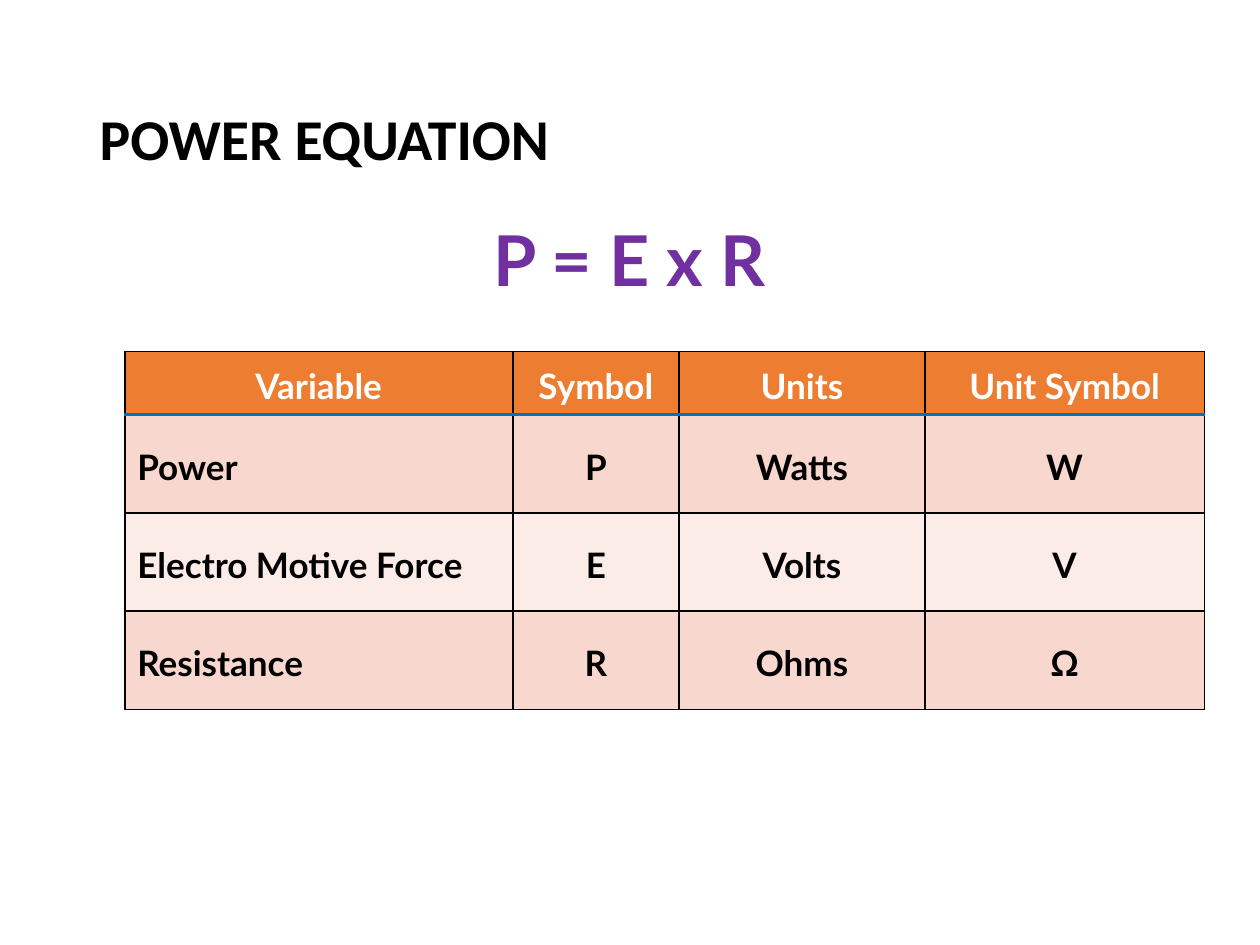
from lxml import etree
from pptx import Presentation
from pptx import util as u
from pptx.dml.color import RGBColor
from pptx.enum import text
from pptx.oxml import ns

BLACK = RGBColor(0x00, 0x00, 0x00)
WHITE = RGBColor(0xFF, 0xFF, 0xFF)
PURPLE = RGBColor(0x70, 0x30, 0xA0)
ORANGE = RGBColor(0xED, 0x7D, 0x31)
BLUE = RGBColor(0x00, 0x70, 0xC0)
BANDS = (RGBColor(0xF8, 0xD7, 0xCE), RGBColor(0xFC, 0xEC, 0xE8))

SLIDE_WIDTH, SLIDE_HEIGHT = u.Inches(10), u.Inches(7.5)
COLUMN_WIDTHS = (3.08, 1.32, 1.95, 2.22)
ROW_HEIGHTS = (0.5, 0.78, 0.78, 0.78)
ROWS = (
    ("Variable", "Symbol", "Units", "Unit Symbol"),
    ("Power", "P", "Watts", "W"),
    ("Electro Motive Force", "E", "Volts", "V"),
    ("Resistance", "R", "Ohms", "Ω"),
)


def inches(*lengths):
    return tuple(u.Inches(length) for length in lengths)


def format_paragraph(paragraph, font_name, size, color, alignment, spacing=1.0):
    paragraph.alignment = alignment
    paragraph.line_spacing = spacing
    font = paragraph.font
    font.name, font.size, font.bold = font_name, u.Pt(size), True
    font.color.rgb = color


def place_title(slide, box):
    title = slide.shapes.title
    title.left, title.top, title.width, title.height = box
    frame = title.text_frame
    frame.text = "POWER EQUATION"
    frame.vertical_anchor = text.MSO_ANCHOR.MIDDLE
    format_paragraph(frame.paragraphs[0], "Calibri", 33, BLACK, text.PP_ALIGN.LEFT, 0.9)


def place_equation(slide, box):
    frame = slide.shapes.add_textbox(*box).text_frame
    frame.word_wrap = True
    frame.auto_size = text.MSO_AUTO_SIZE.SHAPE_TO_FIT_TEXT
    frame.text = "P = E x R"
    format_paragraph(frame.paragraphs[0], "Lato", 40, PURPLE, text.PP_ALIGN.CENTER)


def set_borders(cell, top, bottom):
    properties = cell._tc.get_or_add_tcPr()
    sides = (("L", (BLACK, 1)), ("R", (BLACK, 1)), ("T", top), ("B", bottom))
    for position, (side, (color, width)) in enumerate(sides):
        line = etree.Element(ns.qn(f"a:ln{side}"), w=str(u.Pt(width)))
        fill = etree.SubElement(line, ns.qn("a:solidFill"))
        etree.SubElement(fill, ns.qn("a:srgbClr"), val=str(color))
        properties.insert(position, line)


def place_table(slide, box):
    table = slide.shapes.add_table(len(ROWS), len(COLUMN_WIDTHS), *box).table
    for column, width in zip(table.columns, COLUMN_WIDTHS):
        column.width = u.Inches(width)
    for row, height in zip(table.rows, ROW_HEIGHTS):
        row.height = u.Inches(height)

    plain, divider = (BLACK, 1), (BLUE, 1.5)
    for row_index, labels in enumerate(ROWS):
        header = row_index == 0
        for column_index, label in enumerate(labels):
            cell = table.cell(row_index, column_index)
            cell.text = label
            cell.vertical_anchor = text.MSO_ANCHOR.MIDDLE
            cell.fill.solid()
            cell.fill.fore_color.rgb = ORANGE if header else BANDS[(row_index - 1) % 2]
            centered = header or column_index > 0
            format_paragraph(
                cell.text_frame.paragraphs[0], "Lato", 20, WHITE if header else BLACK,
                text.PP_ALIGN.CENTER if centered else text.PP_ALIGN.LEFT, 1.15,
            )
            set_borders(
                cell,
                top=divider if row_index == 1 else plain,
                bottom=divider if header else plain,
            )


def main():
    presentation = Presentation()
    presentation.slide_width, presentation.slide_height = SLIDE_WIDTH, SLIDE_HEIGHT
    slide = presentation.slides.add_slide(presentation.slide_layouts[5])
    place_title(slide, inches(0.69, 0.4, 8.62, 1.45))
    place_equation(slide, inches(3.45, 1.67, 3.09, 0.77))
    place_table(slide, inches(0.99, 2.79, sum(COLUMN_WIDTHS), sum(ROW_HEIGHTS)))
    presentation.save("out.pptx")


if __name__ == "__main__":
    main()
